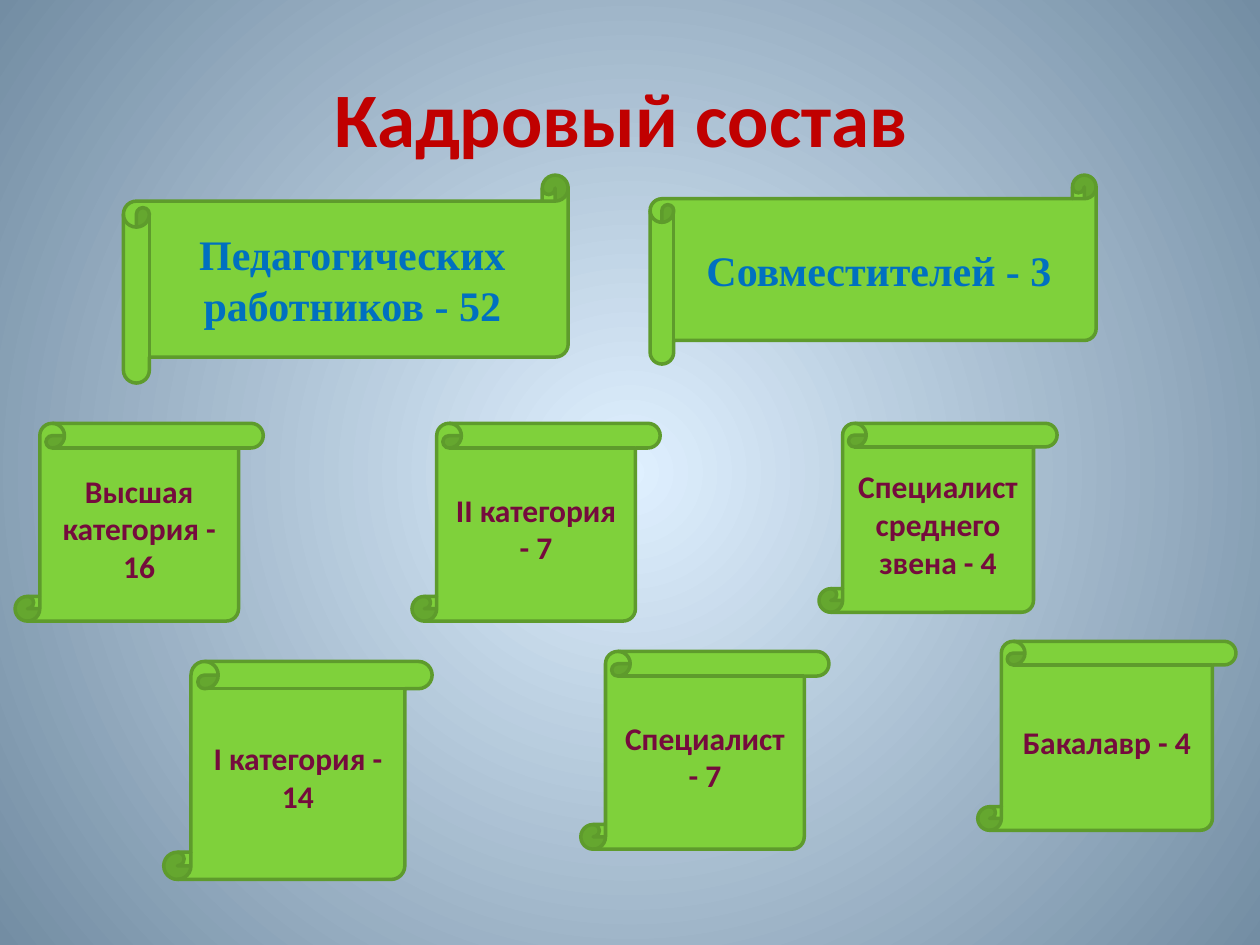
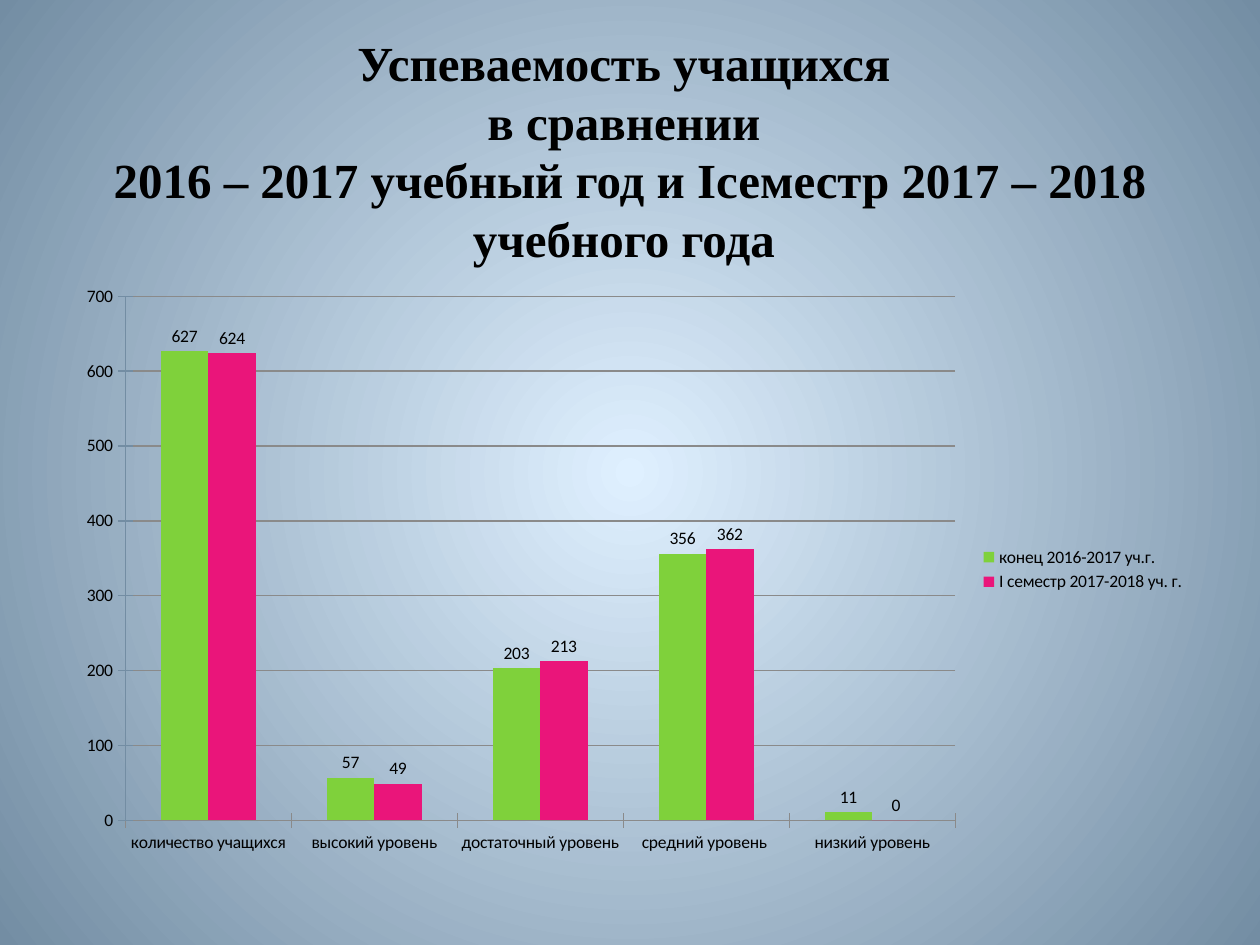
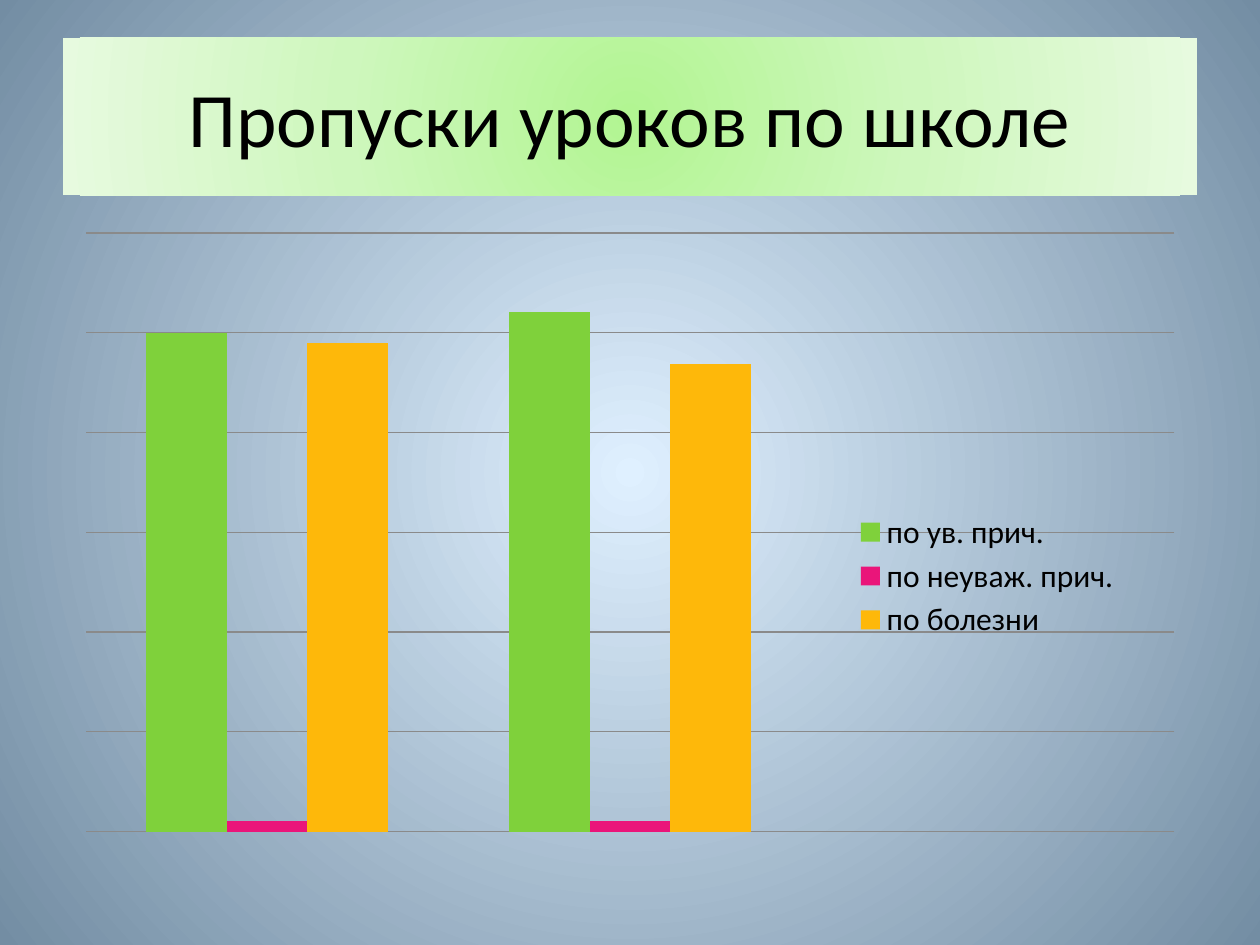
from dataclasses import dataclass

from lxml import etree
from pptx import Presentation
from pptx import util as u
from pptx.chart.data import CategoryChartData
from pptx.dml.color import RGBColor
from pptx.enum import chart as ch, shapes, text
from pptx.oxml.ns import qn

PX = 9144  # EMU per px, 100 px to the inch


@dataclass(frozen=True)
class Theme:
    sans: str = "Calibri"
    serif: str = "Times New Roman"
    black: str = "000000"
    red: str = "C00000"
    blue: str = "0070C0"
    wine: str = "750B3D"
    scroll: str = "7FD13B"
    scroll_line: str = "5E9B2C"
    grid: str = "8A8A8A"
    axis: str = "738DA3"
    series: tuple = ("7FD13B", "EA157A", "FEB80A")
    backdrop: tuple = ((0, "DFF0FF"), (100, "738DA3"))
    band: tuple = ((0, "B2F592"), (50, "CEF7BD"), (100, "E7FADF"))
    title: int = 44
    long_title: int = 28
    long_title_pitch: float = 33.5
    heading: int = 24
    body: int = 18
    chart_small: int = 10


T = Theme()
TITLE_BOX = (50, 30, 900, 125)


def px(*values):
    return [u.Emu(v * PX) for v in values]


def rgb(code):
    return RGBColor.from_string(code)


def style(font, size, color, name=T.sans, bold=False):
    font.size, font.name, font.bold = u.Pt(size), name, bold
    font.color.rgb = rgb(color)


def radial_fill(fill, element, stops):
    """Fill with a gradient that runs outwards from the centre."""
    fill.gradient()
    grad = element.find(".//" + qn("a:gradFill"))
    for child in list(grad):
        grad.remove(child)
    stop_list = etree.SubElement(grad, qn("a:gsLst"))
    for pos, color in stops:
        stop = etree.SubElement(stop_list, qn("a:gs"), pos=str(pos * 1000))
        etree.SubElement(stop, qn("a:srgbClr"), val=color)
    path = etree.SubElement(grad, qn("a:path"), path="circle")
    etree.SubElement(path, qn("a:fillToRect"),
                     {side: "50000" for side in "ltrb"})


def write(sp, words, size, color, name=T.sans, bold=False):
    """Put centred text into a shape."""
    tf = sp.text_frame
    tf.word_wrap = True
    tf.vertical_anchor = text.MSO_ANCHOR.MIDDLE
    p = tf.paragraphs[0]
    p.text = words
    p.alignment = text.PP_ALIGN.CENTER
    for r in p.runs:
        style(r.font, size, color, name, bold)
    return p


def add_title(s, words, size=T.title, color=T.black, name=T.sans, bold=False):
    sp = s.shapes.add_textbox(*px(*TITLE_BOX))
    write(sp, words, size, color, name, bold)
    return sp


def add_scroll(s, kind, box, words, size, color, name=T.sans):
    sp = s.shapes.add_shape(kind, *px(*box))
    sp.shadow.inherit = False
    sp.fill.solid()
    sp.fill.fore_color.rgb = rgb(T.scroll)
    sp.line.color.rgb = rgb(T.scroll_line)
    sp.line.width = u.Pt(2)
    write(sp, words, size, color, name, bold=True)


def add_columns(s, box, cats, series, size, legend_position):
    data = CategoryChartData()
    data.categories = cats
    for name, values in series:
        data.add_series(name, values)
    chart = s.shapes.add_chart(ch.XL_CHART_TYPE.COLUMN_CLUSTERED,
                               *px(*box), data).chart
    chart.has_title = False
    style(chart.font, size, T.black)

    # Columns
    plot = chart.plots[0]
    plot.vary_by_categories = False
    plot.gap_width, plot.overlap = 150, 0
    for ser, color in zip(plot.series, T.series):
        ser.format.fill.solid()
        ser.format.fill.fore_color.rgb = rgb(color)
        ser.invert_if_negative = False

    # Axes and grid
    for axis, color in ((chart.category_axis, T.grid),
                        (chart.value_axis, T.axis)):
        axis.major_tick_mark = ch.XL_TICK_MARK.CROSS
        axis.format.line.color.rgb = rgb(color)
    grid = chart.value_axis.major_gridlines.format.line
    grid.color.rgb = rgb(T.grid)
    grid.width = u.Pt(0.75)

    # Legend
    chart.has_legend = True
    chart.legend.position = legend_position
    chart.legend.include_in_layout = False
    return chart


def label_columns(chart):
    for ser in chart.plots[0].series:
        labels = ser.data_labels
        labels.show_value = True
        labels.position = ch.XL_LABEL_POSITION.OUTSIDE_END
        style(labels.font, T.chart_small, T.black)


def place_legend(legend, **place):
    """Set the legend's x, y, w and h as shares of the chart."""
    layout = etree.Element(qn("c:layout"))
    manual = etree.SubElement(layout, qn("c:manualLayout"))
    for side in "xy":
        etree.SubElement(manual, qn(f"c:{side}Mode"), val="edge")
    for side, share in place.items():
        etree.SubElement(manual, qn(f"c:{side}"), val=str(share))
    element = legend._element
    for old in element.findall(qn("c:layout")):
        element.remove(old)
    element.find(qn("c:legendPos")).addnext(layout)


def staff_slide(s):
    add_title(s, "Кадровый состав ", color=T.red, bold=True)
    # Totals
    for box, words in (
        ((98, 139, 353, 165), "Педагогических работников - 52"),
        ((516, 139, 354, 150), "Совместителей - 3"),
    ):
        add_scroll(s, shapes.MSO_SHAPE.HORIZONTAL_SCROLL, box, words,
                   T.heading, T.blue, T.serif)
    # Qualification levels
    for box, words in (
        ((12, 336, 197, 157), "Высшая категория - 16"),
        ((130, 525, 213, 173), "I категория - 14"),
        ((327, 336, 197, 157), "II категория - 7"),
        ((461, 517, 197, 157), "Специалист - 7"),
        ((650, 336, 189, 150), "Специалист среднего звена - 4"),
        ((776, 509, 205, 150), "Бакалавр - 4"),
    ):
        add_scroll(s, shapes.MSO_SHAPE.VERTICAL_SCROLL, box, words,
                   T.body, T.wine)


def progress_slide(s):
    sp = add_title(
        s, "Успеваемость учащихся \vв сравнении \v"
           "2016 – 2017 учебный год и Iсеместр 2017 – 2018 учебного года ",
        T.long_title, name=T.serif, bold=True)
    sp.text_frame.margin_top = px(58)[0]
    sp.text_frame.paragraphs[0].line_spacing = u.Pt(T.long_title_pitch)
    chart = add_columns(
        s, (51, 218, 900, 468),
        ["количество учащихся", "высокий уровень", "достаточный уровень",
         "средний уровень ", "низкий уровень"],
        [("конец 2016-2017 уч.г.", (627, 57, 203, 356, 11)),
         ("I семестр 2017-2018 уч. г.", (624, 49, 213, 362, 0))],
        T.chart_small, ch.XL_LEGEND_POSITION.RIGHT)
    label_columns(chart)


def absence_slide(s):
    sp = add_title(s, "Пропуски уроков по школе")
    radial_fill(sp.fill, sp._element, T.band)
    chart = add_columns(
        s, (50, 175, 900, 495), ["1", "2", ""],
        [("по ув. прич.", (96, 100, None)),
         ("по неуваж. прич.", (2, 2, None)),
         ("по болезни", (94, 90, None))],
        T.body, ch.XL_LEGEND_POSITION.LEFT)
    axis = chart.value_axis
    axis.minimum_scale, axis.maximum_scale, axis.major_unit = 0, 115.2, 19.2
    axis.visible = chart.category_axis.visible = False
    chart.legend.include_in_layout = True
    place_legend(chart.legend, x=0.69, y=0.46, w=0.25, h=0.22)


def main():
    prs = Presentation()
    prs.slide_width, prs.slide_height = px(1000, 750)
    master = prs.slide_master
    radial_fill(master.background.fill, master._element, T.backdrop)
    for build in (staff_slide, progress_slide, absence_slide):
        build(prs.slides.add_slide(prs.slide_layouts[6]))
    prs.save("out.pptx")


if __name__ == "__main__":
    main()
